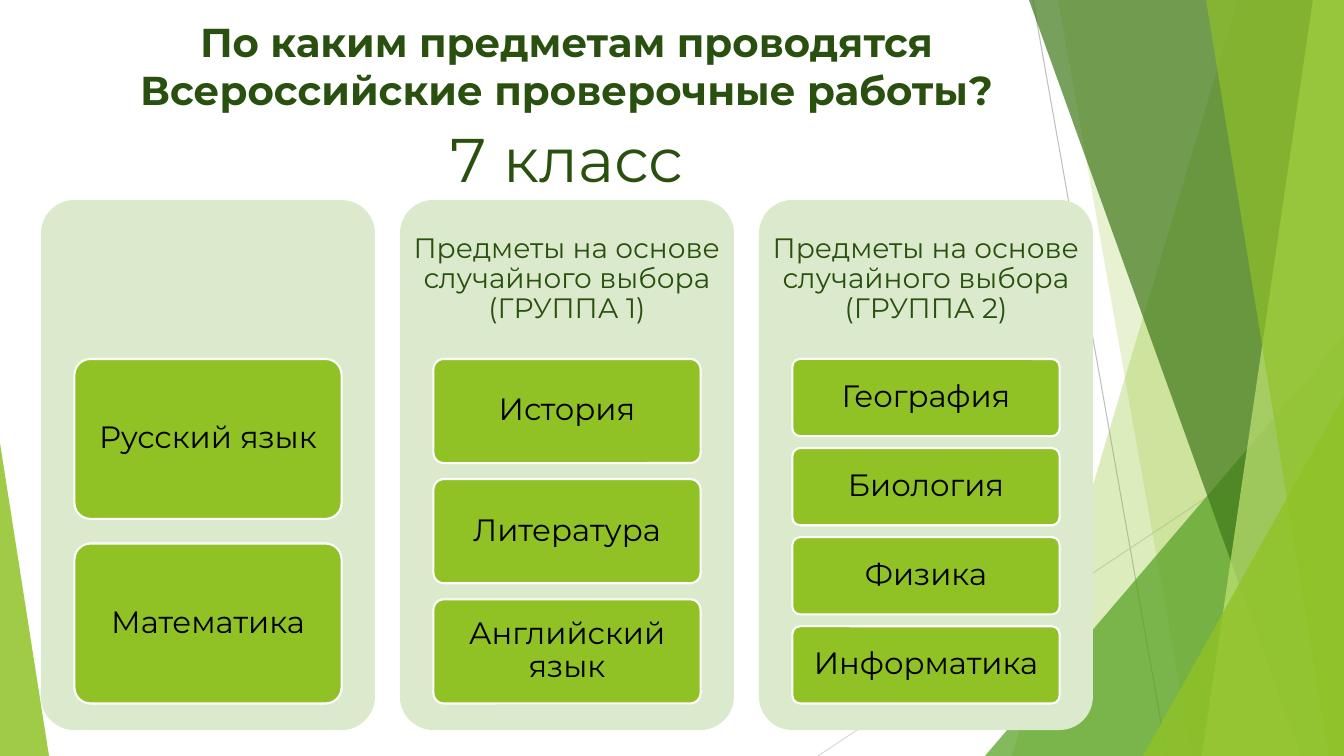
from dataclasses import dataclass

from lxml.etree import SubElement
from pptx import Presentation
from pptx.dml.color import RGBColor
from pptx.enum.shapes import MSO_CONNECTOR, MSO_SHAPE
from pptx.enum.text import MSO_ANCHOR, MSO_AUTO_SIZE, PP_ALIGN
from pptx.oxml.ns import qn
from pptx.util import Pt

SCALE = 914400 / 100.8
WIDTH, HEIGHT = 1344, 756


@dataclass(frozen=True)
class Theme:
    font: str = "Montserrat"
    heading: str = "2A5010"
    label: str = "000000"
    panel: str = "DBE9CD"
    lime: str = "90C226"
    leaf: str = "54A021"
    forest: str = "3F7819"
    pale: str = "C0E474"
    outline: str = "FFFFFF"
    ray: str = "BFBFBF"
    light_ray: str = "D9D9D9"
    title_size: float = 28.8
    grade_size: int = 44
    group_size: int = 20
    subject_size: int = 22


THEME = Theme()

COLUMNS = [
    ("", ["Русский язык", "Математика"]),
    ("Предметы на основе случайного выбора (ГРУППА 1)",
     ["История", "Литература", "Английский язык"]),
    ("Предметы на основе случайного выбора (ГРУППА 2)",
     ["География", "Биология", "Физика", "Информатика"]),
]


def px(value):
    return round(value * SCALE)


def emu(*values):
    return [px(value) for value in values]


def paint(shape, color, opacity=100, outline=None):
    shape.shadow.inherit = False
    shape.fill.solid()
    shape.fill.fore_color.rgb = RGBColor.from_string(color)
    if opacity < 100:
        fill_color = shape.fill._xPr.find(qn("a:solidFill"))[0]
        SubElement(fill_color, qn("a:alpha"), val=str(opacity * 1000))
    if outline:
        shape.line.color.rgb = RGBColor.from_string(outline)
        shape.line.width = Pt(1.5)
    else:
        shape.line.fill.background()


def write_text(shape, text, *, size, color, bold=False, anchor=MSO_ANCHOR.TOP,
               margins=(10, 5), spacing=1.0):
    frame = shape.text_frame
    frame.word_wrap = True
    frame.auto_size = MSO_AUTO_SIZE.NONE
    frame.vertical_anchor = anchor
    frame.margin_left = frame.margin_right = px(margins[0])
    frame.margin_top = frame.margin_bottom = px(margins[1])
    paragraph = frame.paragraphs[0]
    paragraph.alignment = PP_ALIGN.CENTER
    paragraph.line_spacing = spacing
    run = paragraph.add_run()
    run.text = text
    run.font.name = THEME.font
    run.font.size = Pt(size)
    run.font.bold = bold
    run.font.color.rgb = RGBColor.from_string(color)


def add_ray(slide, start, end, color):
    ray = slide.shapes.add_connector(MSO_CONNECTOR.STRAIGHT, *emu(*start, *end))
    ray.line.color.rgb = RGBColor.from_string(color)
    ray.line.width = Pt(0.75)
    SubElement(ray._element.spPr, qn("a:effectLst"))


def add_band(slide, top_left, bottom_left, color, opacity):
    builder = slide.shapes.build_freeform(top_left, 0, scale=SCALE)
    builder.add_line_segments(
        [(WIDTH, 0), (WIDTH, HEIGHT), (bottom_left, HEIGHT)], close=True)
    paint(builder.convert_to_shape(), color, opacity)


def add_corner(slide, box, apex, color, opacity):
    corner = slide.shapes.add_shape(MSO_SHAPE.ISOSCELES_TRIANGLE, *emu(*box))
    corner.adjustments[0] = apex
    paint(corner, color, opacity)


def add_rounded(slide, box, color, outline=None):
    shape = slide.shapes.add_shape(MSO_SHAPE.ROUNDED_RECTANGLE, *emu(*box))
    shape.adjustments[0] = 0.1
    paint(shape, color, outline=outline)
    return shape


def draw_facets(slide):
    add_ray(slide, (1033, 0), (1167, HEIGHT), THEME.ray)
    add_ray(slide, (WIDTH, 406), (818, HEIGHT), THEME.light_ray)
    add_band(slide, 1238, 1012, THEME.lime, 30)
    add_band(slide, 1058, 1192, THEME.lime, 20)
    add_corner(slide, (985, 336, 359, 420), 1, THEME.leaf, 72)
    add_band(slide, 1029, 1301, THEME.forest, 70)
    add_band(slide, 1313, 1202, THEME.pale, 70)
    add_band(slide, 1206, 1329, THEME.lime, 65)
    add_corner(slide, (1143, 396, 201, 360), 1, THEME.lime, 80)
    add_corner(slide, (0, 443, 49, 313), 0, THEME.lime, 85)


def draw_heading(slide, box):
    left, top, width, height = box
    title = slide.shapes.title
    slide.shapes._spTree.append(title._element)
    title.left, title.top, title.width, title.height = emu(left, top, width, 103)
    write_text(title, "По каким предметам проводятся Всероссийские проверочные работы?",
               size=THEME.title_size, color=THEME.heading, bold=True)
    grade = slide.shapes.add_textbox(
        *emu(left + 284, top + 104, 460, height - 104))
    write_text(grade, "7 класс", size=THEME.grade_size, color=THEME.heading)


def draw_column(slide, box, group, subjects):
    left, top, width, height = box
    add_rounded(slide, box, THEME.panel)
    if group:
        header = slide.shapes.add_textbox(*emu(left, top, width, height * 0.3))
        write_text(header, group, size=THEME.group_size, color=THEME.heading,
                   anchor=MSO_ANCHOR.MIDDLE, margins=(8, 8), spacing=0.9)
    count = len(subjects)
    gap_ratio = 2 / 13
    tile_height = height * 0.65 / (count + (count - 1) * gap_ratio)
    for index, subject in enumerate(subjects):
        tile_top = top + height * 0.3 + index * tile_height * (1 + gap_ratio)
        tile = add_rounded(
            slide, (left + width * 0.1, tile_top, width * 0.8, tile_height),
            THEME.lime, THEME.outline)
        write_text(tile, subject, size=THEME.subject_size, color=THEME.label,
                   anchor=MSO_ANCHOR.MIDDLE, margins=(10, 8), spacing=0.9)


def draw_columns(slide, box):
    left, top, width, height = box
    gap = 25
    column_width = (width - gap * (len(COLUMNS) - 1)) / len(COLUMNS)
    for index, (group, subjects) in enumerate(COLUMNS):
        column_left = left + index * (column_width + gap)
        draw_column(slide, (column_left, top, column_width, height), group, subjects)


def main():
    presentation = Presentation()
    presentation.slide_width, presentation.slide_height = emu(WIDTH, HEIGHT)
    slide = presentation.slides.add_slide(presentation.slide_layouts[5])
    draw_facets(slide)
    draw_heading(slide, (53, 12, 1027, 189))
    draw_columns(slide, (41, 200, 1052, 530))
    presentation.save("out.pptx")


if __name__ == "__main__":
    main()
